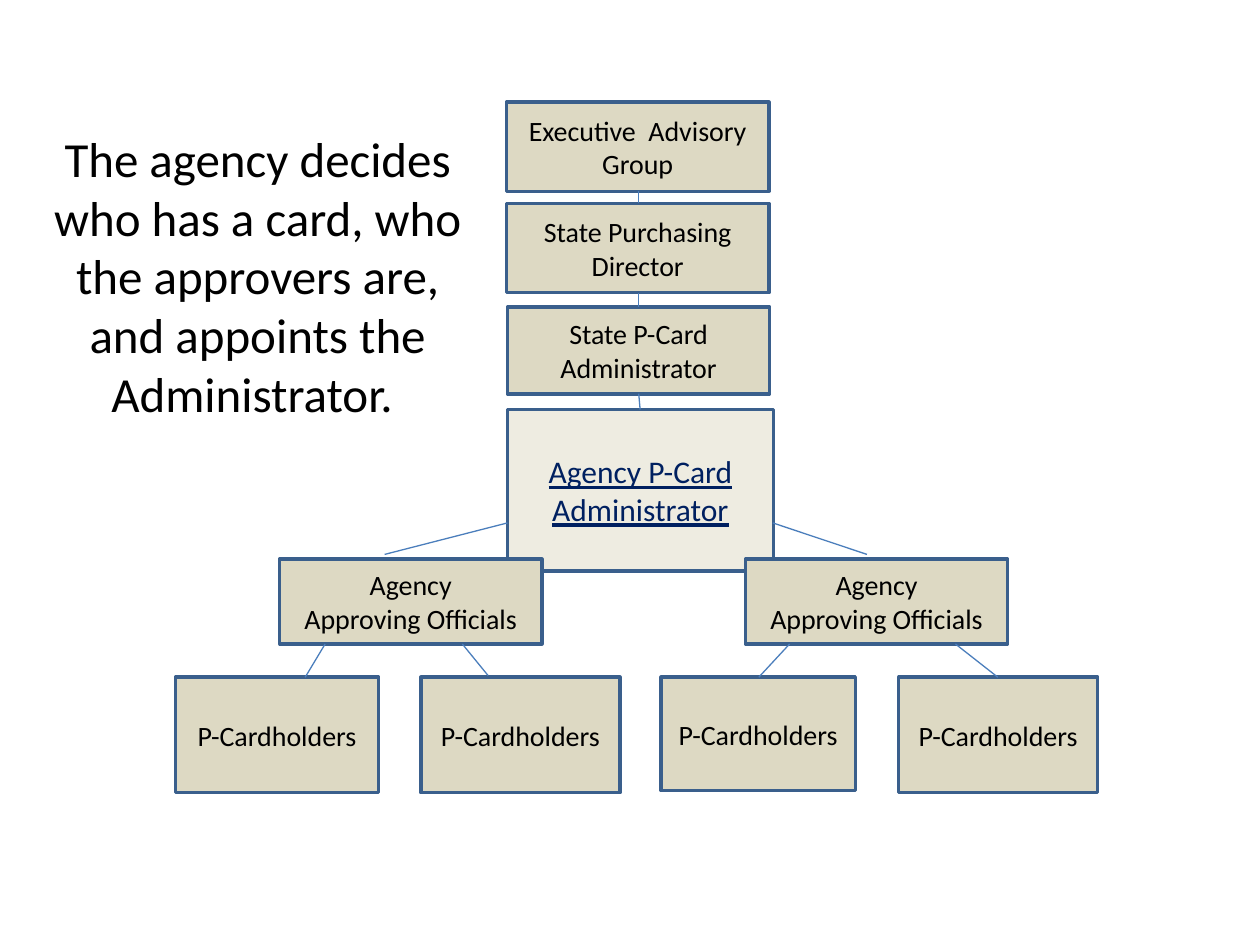
from pptx import Presentation
from pptx.util import Pt
from pptx.dml.color import RGBColor as RGB
from pptx.enum.shapes import MSO_SHAPE as SHAPE, MSO_CONNECTOR as CONN
from pptx.enum.text import PP_ALIGN as ALIGN, MSO_ANCHOR as ANCHOR
from lxml import etree

COLORS = {"tan": "DDD9C3", "light": "EEECE1", "border": "3A5F8C",
          "link": "4B7EBC", "text": "000000", "navy": "002060"}
A_NS = "http://schemas.openxmlformats.org/drawingml/2006/main"


def color(name):
    return RGB.from_string(COLORS[name])


def write(tf, lines, size, name, underline=None):
    tf.word_wrap = True
    for i, line in enumerate(lines):
        p = tf.paragraphs[0] if i == 0 else tf.add_paragraph()
        p.text = line
        p.alignment = ALIGN.CENTER
        p.font.name = "Calibri"
        p.font.size = Pt(size)
        p.font.color.rgb = color(name)
        p.font.underline = underline


prs = Presentation()
prs.slide_width, prs.slide_height = Pt(720), Pt(540)
s = prs.slides.add_slide(prs.slide_layouts[6])

tb = s.shapes.add_textbox(Pt(12.2), Pt(69.8), Pt(270), Pt(177.1))
write(tb.text_frame,
      ["The agency decides who has a card, who the approvers are,",
       "and appoints the", "Administrator. "], 28, "text")

officials = ["Agency", "Approving Officials"]
holders = ["P-Cardholders"]
boxes = [
    (289.5, 58.3, 149.8, 51.1, ["Executive  Advisory Group"]),
    (289.5, 116.2, 149.8, 51.1, ["State Purchasing Director"]),
    (290, 175.4, 149.8, 49.7, ["State P-Card Administrator"]),
    (290, 234, 151.9, 92.2, ["Agency P-Card Administrator"]),
    (159.8, 319.5, 149.8, 48.4, officials),
    (426, 319.5, 149.8, 48.4, officials),
    (100.2, 387, 116.2, 66, holders),
    (240.5, 387, 113.8, 66, holders),
    (377.8, 387, 111, 64.8, holders),
    (513.5, 387, 113.8, 66, holders),
]
for x, y, w, h, lines in boxes:
    sp = s.shapes.add_shape(SHAPE.RECTANGLE, Pt(x), Pt(y), Pt(w), Pt(h))
    sp.shadow.inherit = False
    main = lines == ["Agency P-Card Administrator"]
    sp.fill.solid()
    sp.fill.fore_color.rgb = color("light" if main else "tan")
    sp.line.color.rgb = color("border")
    sp.line.width = Pt(2)
    sp.text_frame.vertical_anchor = ANCHOR.MIDDLE
    if main:
        write(sp.text_frame, lines, 18, "navy", True)
    else:
        write(sp.text_frame, lines, 16, "text")

links = [
    (364.7, 116.2, 364.7, 109.4),
    (364.7, 175.4, 364.7, 167.3),
    (365.8, 234, 365, 225),
    (441.6, 298.8, 495.4, 316.8),
    (290, 298.8, 219.8, 316.8),
    (185.8, 368, 174.4, 387),
    (264.2, 368, 278.9, 386),
    (451.2, 368, 433.6, 387),
    (546, 368, 570.2, 387),
]
for x1, y1, x2, y2 in links:
    c = s.shapes.add_connector(CONN.STRAIGHT, Pt(x1), Pt(y1), Pt(x2), Pt(y2))
    c.line.color.rgb = color("link")
    c.line.width = Pt(0.75)
    etree.SubElement(c._element.spPr, f"{{{A_NS}}}effectLst")

prs.save("out.pptx")
